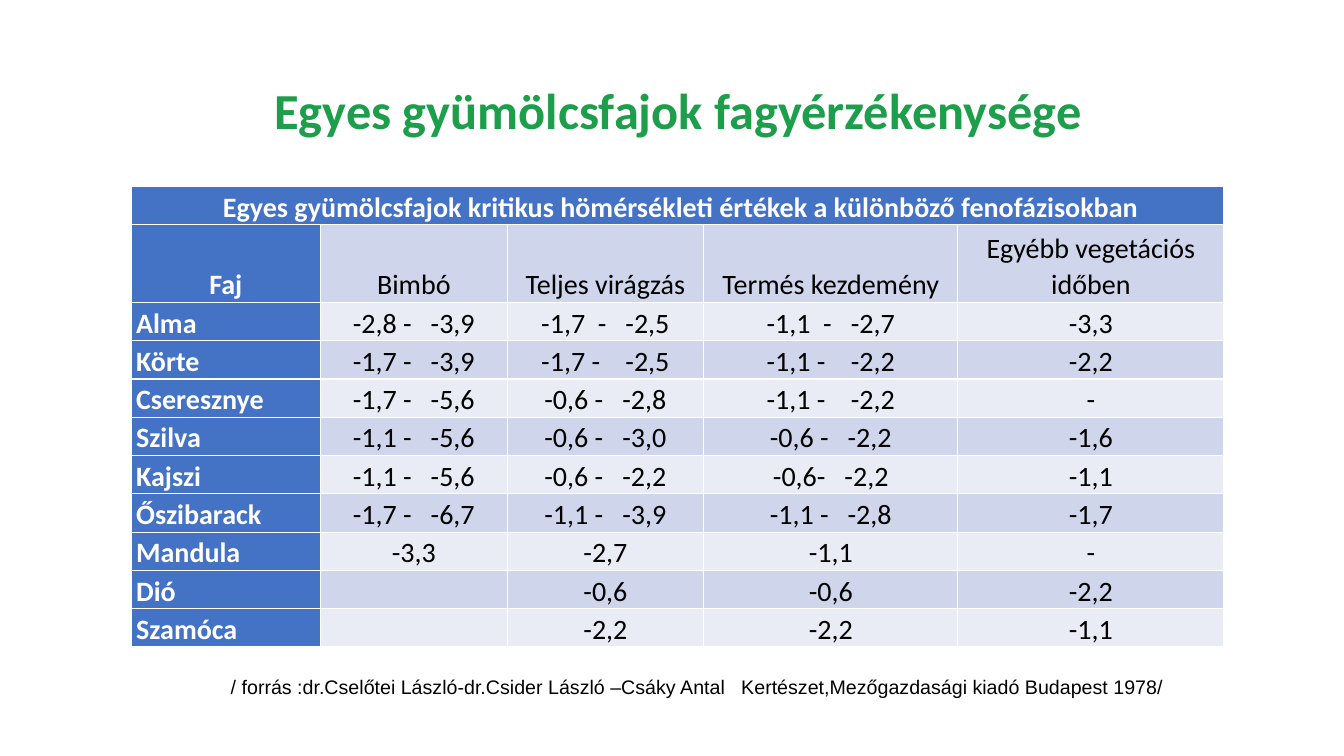
import pptx
import pptx.dml.color
import pptx.enum.text
import pptx.util
from dataclasses import dataclass

Inches = pptx.util.Inches
Align = pptx.enum.text.PP_ALIGN
Anchor = pptx.enum.text.MSO_ANCHOR


@dataclass(frozen=True)
class Theme:
    green: str = "1C9E4A"
    blue: str = "4472C4"
    bands: tuple = ("E9EBF5", "CFD5EA")
    white: str = "FFFFFF"
    black: str = "000000"
    heading_font: str = "Calibri"
    source_font: str = "Arial"
    title_size: int = 36
    table_size: int = 20
    source_size: int = 14


theme = Theme()


def add_span(para, text, font, size, color, bold=False):
    span = para.add_run()
    span.text = text
    span.font.name = font
    span.font.size = pptx.util.Pt(size)
    span.font.bold = bold
    span.font.color.rgb = pptx.dml.color.RGBColor.from_string(color)


deck = pptx.Presentation()
deck.slide_width = Inches(13.33)
deck.slide_height = Inches(7.5)
page = deck.slides.add_slide(deck.slide_layouts.get_by_name("Title Only"))

title = page.shapes.title
title.left, title.top = Inches(0.35), Inches(0.4)
title.width, title.height = Inches(12.64), Inches(1.45)
title.text_frame.vertical_anchor = Anchor.MIDDLE
para = title.text_frame.paragraphs[0]
para.alignment = Align.CENTER
para.line_spacing = 0.9
add_span(para, " Egyes gyümölcsfajok fagyérzékenysége", theme.heading_font,
         theme.title_size, theme.green, True)

rows = [
    [" Egyes gyümölcsfajok kritikus hömérsékleti értékek a különböző fenofázisokban",
     "", "", "", ""],
    ["Faj", "Bimbó", "Teljes virágzás", "Termés kezdemény", "Egyébb vegetációs időben"],
    ["Alma", "-2,8 -   -3,9", "-1,7  -   -2,5", "-1,1  -   -2,7", "-3,3"],
    ["Körte", "-1,7 -   -3,9", "-1,7 -    -2,5", "-1,1 -    -2,2", "-2,2"],
    ["Cseresznye", "-1,7 -   -5,6", "-0,6 -   -2,8", "-1,1 -    -2,2", "-"],
    ["Szilva", "-1,1 -   -5,6", "-0,6 -   -3,0", "-0,6 -   -2,2", "-1,6"],
    ["Kajszi", "-1,1 -   -5,6", "-0,6 -   -2,2", "-0,6-   -2,2", "-1,1"],
    ["Őszibarack", "-1,7 -   -6,7", "-1,1 -   -3,9", "-1,1 -   -2,8", "-1,7"],
    ["Mandula", "-3,3", "-2,7", "-1,1", "-"],
    ["Dió", "", "-0,6", "-0,6", "-2,2"],
    ["Szamóca", "", "-2,2", "-2,2", "-1,1"],
]
column_widths = [1.88, 1.85, 1.95, 2.52, 2.64]
table = page.shapes.add_table(len(rows), len(column_widths), Inches(1.3), Inches(1.85),
                              Inches(10.84), Inches(4.6)).table
table.first_col = True
for column, width in zip(table.columns, column_widths):
    column.width = Inches(width)
table.cell(0, 0).merge(table.cell(0, 4))

for row_index, values in enumerate(rows):
    table.rows[row_index].height = Inches(0.77 if row_index == 1 else 0.38)
    for column_index, value in enumerate(values):
        cell = table.cell(row_index, column_index)
        is_header = row_index == 0 or column_index == 0
        fill_color = theme.blue if is_header else theme.bands[row_index % 2]
        cell.fill.solid()
        cell.fill.fore_color.rgb = pptx.dml.color.RGBColor.from_string(fill_color)
        cell.margin_left = cell.margin_right = Inches(0.05)
        cell.margin_top = cell.margin_bottom = Inches(0)
        cell.vertical_anchor = Anchor.BOTTOM
        if value:
            para = cell.text_frame.paragraphs[0]
            is_species = column_index == 0 and row_index > 1
            para.alignment = Align.LEFT if is_species else Align.CENTER
            para.line_spacing = 1.07
            add_span(para, value, theme.heading_font, theme.table_size,
                     theme.white if is_header else theme.black, is_header)

source = page.shapes.add_textbox(Inches(2.19), Inches(6.65), Inches(9.58), Inches(0.34))
source.text_frame.word_wrap = False
source.text_frame.auto_size = pptx.enum.text.MSO_AUTO_SIZE.SHAPE_TO_FIT_TEXT
add_span(source.text_frame.paragraphs[0],
         "/ forrás :dr.Cselőtei László-dr.Csider László –Csáky Antal   "
         "Kertészet,Mezőgazdasági kiadó Budapest 1978/",
         theme.source_font, theme.source_size, theme.black)

deck.save("out.pptx")
